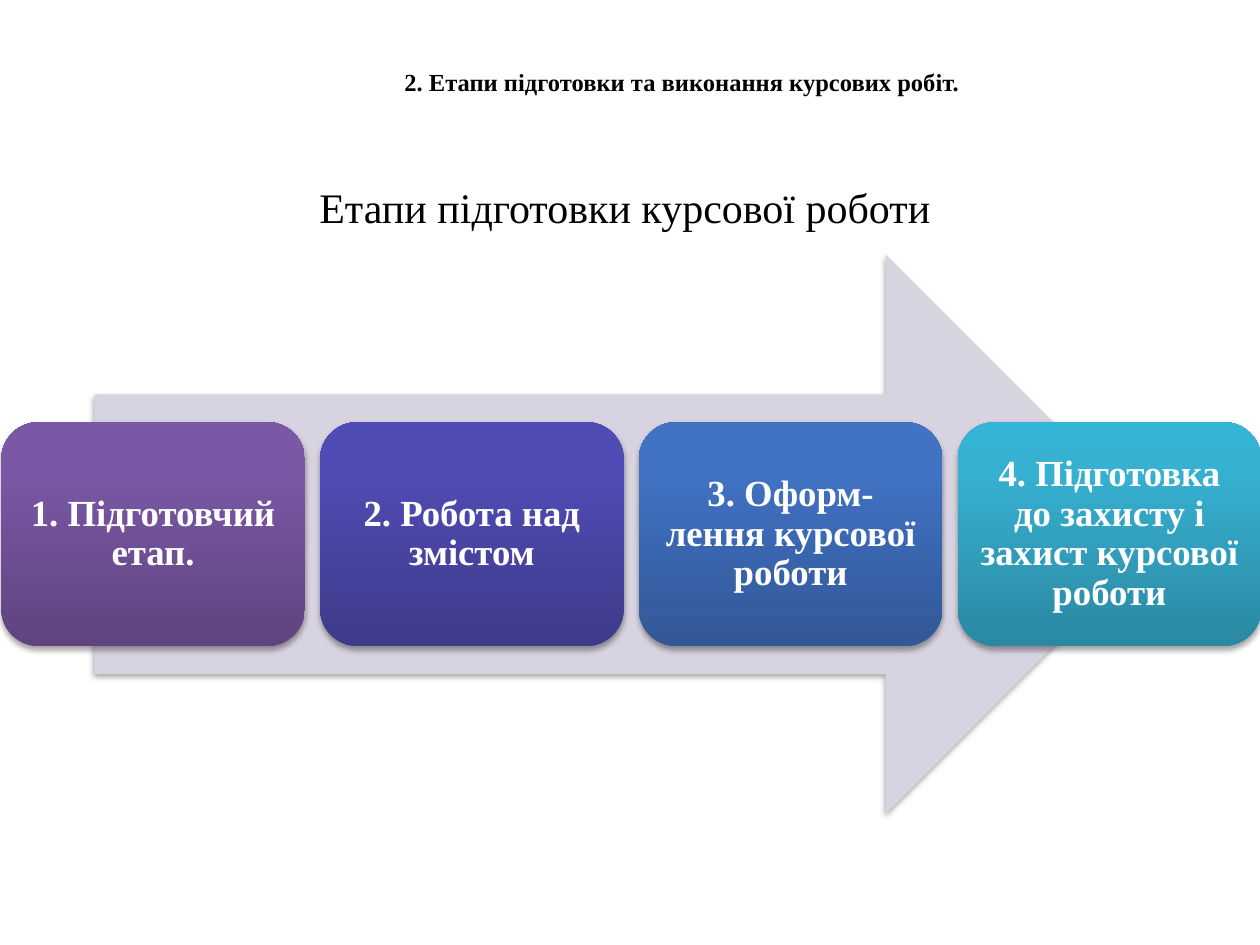
from copy import deepcopy

from lxml import etree
from pptx import Presentation
from pptx.dml.color import RGBColor
from pptx.enum.shapes import MSO_SHAPE
from pptx.enum.text import MSO_ANCHOR, PP_ALIGN
from pptx.oxml.ns import qn
from pptx.util import Inches, Pt

STEPS = [
    ("1. Підготовчий етап.", ("5F4480", "7B58A6", "7C57A8")),
    ("2. Робота над змістом", ("3E3B8B", "504CB5", "4F4BB8")),
    ("3. Оформ-лення курсової роботи", ("325897", "4172C4", "3F72C7")),
    ("4. Підготовка до захисту і захист курсової роботи",
     ("2A88A2", "37B1D2", "34B4D6")),
]


def color(code):
    """Turn a hex string into a colour."""
    return RGBColor.from_string(code)


def write(shape, text, size, tint, bold, align, anchor):
    """Put one styled paragraph into a shape."""
    frame = shape.text_frame
    frame.word_wrap = True
    frame.vertical_anchor = anchor
    frame.text = text
    para = frame.paragraphs[0]
    para.alignment = align
    font = para.font
    font.name, font.size, font.bold = "Times New Roman", Pt(size), bold
    font.color.rgb = color(tint)
    return para


def add_form(slide, kind, *box):
    """Add a borderless shape with a soft shadow below it."""
    shape = slide.shapes.add_shape(kind, *map(Inches, box))
    shape.line.fill.background()
    shape.shadow.inherit = False
    effects = shape._element.spPr.find(qn("a:effectLst"))
    shadow = etree.SubElement(effects, qn("a:outerShdw"), blurRad="40000",
                              dist="23000", dir="5400000", rotWithShape="0")
    black = etree.SubElement(shadow, qn("a:srgbClr"), val="000000")
    etree.SubElement(black, qn("a:alpha"), val="35000")
    return shape


def shade(shape, tints):
    """Fill a shape with a three-stop gradient rising from its bottom."""
    fill = shape.fill
    fill.gradient()
    fill.gradient_angle = 90
    stops = shape._element.spPr.find(qn("a:gradFill")).find(qn("a:gsLst"))
    stops.append(deepcopy(stops[0]))
    for stop, place, tint in zip(fill.gradient_stops, (0, 0.8, 1), tints):
        stop.position = place
        stop.color.rgb = color(tint)


def add_step(slide, left, text, tints):
    """Add one rounded card of the process."""
    card = add_form(slide, MSO_SHAPE.ROUNDED_RECTANGLE, left, 3.35, 2.41, 1.78)
    shade(card, tints)
    para = write(card, text, 21, "FFFFFF", True, PP_ALIGN.CENTER,
                 MSO_ANCHOR.MIDDLE)
    para.line_spacing = 0.9
    frame = card.text_frame
    frame.margin_left = frame.margin_right = Inches(0.09)
    frame.margin_top = frame.margin_bottom = Inches(0.09)


def main():
    """Build the slide and save it."""
    deck = Presentation()
    deck.slide_width, deck.slide_height = Inches(10), Inches(7.5)
    slide = deck.slides.add_slide(deck.slide_layouts[5])

    title = slide.shapes.title
    title.left, title.top = Inches(3.11), Inches(0.48)
    title.width, title.height = Inches(6.69), Inches(0.34)
    write(title, "2. Етапи підготовки та виконання курсових робіт.", 14,
          "000000", True, PP_ALIGN.JUSTIFY, MSO_ANCHOR.MIDDLE)

    head = slide.shapes.add_textbox(*map(Inches, (0.43, 1.39, 9.06, 1.31)))
    write(head, "Етапи підготовки курсової роботи", 24, "000000", False,
          PP_ALIGN.CENTER, MSO_ANCHOR.TOP)

    arrow = add_form(slide, MSO_SHAPE.RIGHT_ARROW, 0.75, 2.02, 8.5, 4.44)
    arrow.fill.solid()
    arrow.fill.fore_color.rgb = color("D8D3E0")
    for index, (text, tints) in enumerate(STEPS):
        add_step(slide, 0.01 + 2.53 * index, text, tints)

    deck.save("out.pptx")


if __name__ == "__main__":
    main()
